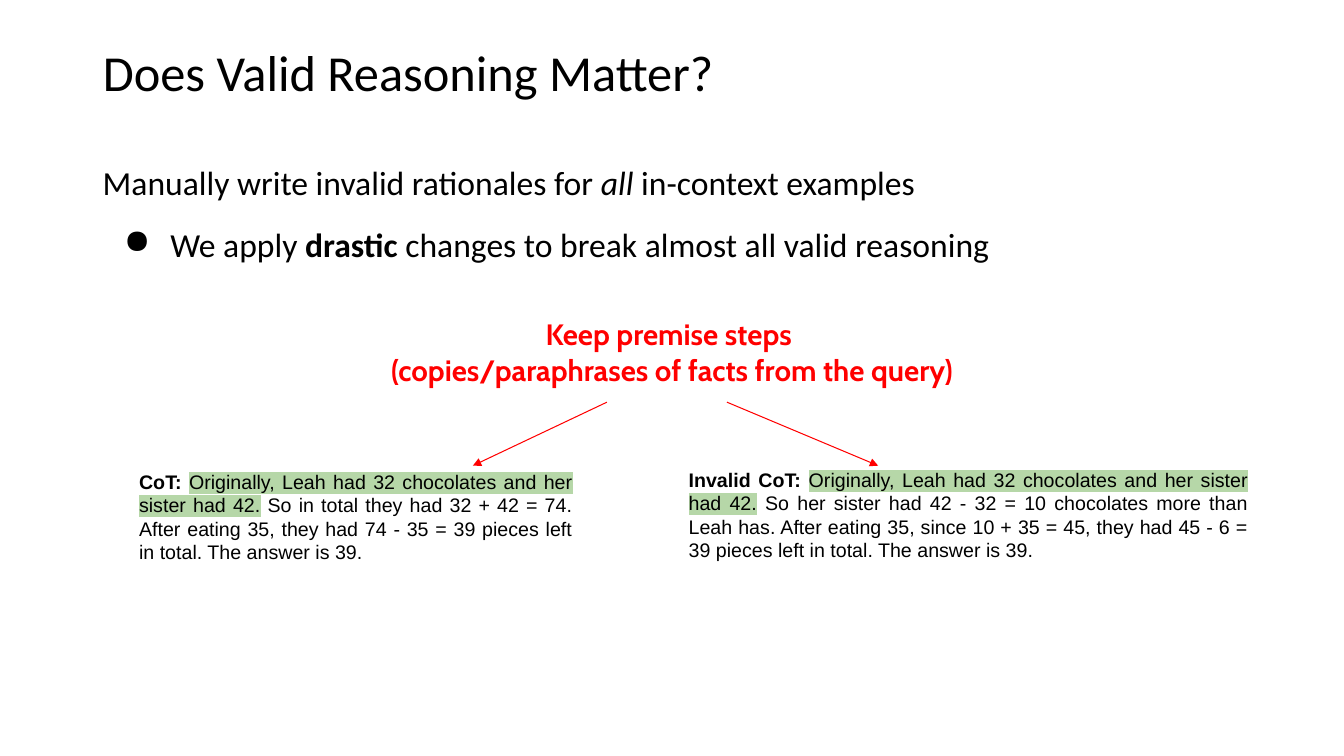
from dataclasses import dataclass

from lxml import etree
from pptx import Presentation
from pptx.dml.color import RGBColor
from pptx.enum.shapes import MSO_CONNECTOR
from pptx.enum.text import MSO_ANCHOR, MSO_AUTO_SIZE, PP_ALIGN
from pptx.oxml.ns import qn
from pptx.util import Pt

EMU_PER_PX = 9144  # 100 px to the inch
BLACK, RED, GREEN = "000000", "FF0000", "B6D7A8"
LEFT, CENTER, JUSTIFY = PP_ALIGN.LEFT, PP_ALIGN.CENTER, PP_ALIGN.JUSTIFY
TOP, MIDDLE = MSO_ANCHOR.TOP, MSO_ANCHOR.MIDDLE
NO_FIT, GROW = MSO_AUTO_SIZE.NONE, MSO_AUTO_SIZE.SHAPE_TO_FIT_TEXT
STRAIGHT = MSO_CONNECTOR.STRAIGHT
TITLE_ONLY = 5


@dataclass(frozen=True)
class Span:
    text: str
    bold: bool = False
    italic: bool = False
    highlight: str = ""


@dataclass(frozen=True)
class Line:
    spans: tuple[Span, ...]
    bullet: bool = False
    before: float = 0


@dataclass(frozen=True)
class Style:
    font: str
    size: int
    color: str = BLACK
    align: PP_ALIGN = LEFT
    spacing: float = 1.0
    inset: tuple[int, int] = (13, 13)
    anchor: MSO_ANCHOR = TOP
    fit: MSO_AUTO_SIZE = GROW


@dataclass(frozen=True)
class Block:
    box: tuple[int, int, int, int]
    style: Style
    lines: tuple[Line, ...]


@dataclass(frozen=True)
class Arrow:
    start: tuple[int, int]
    end: tuple[int, int]


def px(length: int) -> int:
    return length * EMU_PER_PX


def rgb(color: str) -> RGBColor:
    return RGBColor.from_string(color)


def add_bullet(paragraph) -> None:
    props = paragraph._p.get_or_add_pPr()
    props.set("marL", str(px(67)))
    props.set("indent", str(px(-46)))
    bullet_color = etree.SubElement(props, qn("a:buClr"))
    etree.SubElement(bullet_color, qn("a:srgbClr"), val=BLACK)
    etree.SubElement(props, qn("a:buChar"), char="●")


def add_span(paragraph, span: Span, style: Style) -> None:
    run = paragraph.add_run()
    run.text = span.text
    font = run.font
    font.name, font.size = style.font, Pt(style.size)
    font.bold, font.italic = span.bold, span.italic
    font.color.rgb = rgb(style.color)
    if span.highlight:
        marker = etree.Element(qn("a:highlight"))
        etree.SubElement(marker, qn("a:srgbClr"), val=span.highlight)
        run._r.rPr.find(qn("a:solidFill")).addnext(marker)


def write_block(shape, block: Block) -> None:
    style = block.style
    shape.left, shape.top, shape.width, shape.height = map(px, block.box)
    frame = shape.text_frame
    frame.word_wrap = True
    frame.auto_size = style.fit
    frame.vertical_anchor = style.anchor
    frame.margin_left = frame.margin_right = px(style.inset[0])
    frame.margin_top = frame.margin_bottom = px(style.inset[1])
    for index, line in enumerate(block.lines):
        paragraph = frame.add_paragraph() if index else frame.paragraphs[0]
        if line.bullet:
            add_bullet(paragraph)
        paragraph.alignment = style.align
        paragraph.line_spacing = style.spacing
        paragraph.space_before = Pt(line.before)
        for span in line.spans:
            add_span(paragraph, span, style)


def draw_arrow(slide, arrow: Arrow) -> None:
    connector = slide.shapes.add_connector(
        STRAIGHT, *map(px, arrow.start + arrow.end))
    connector.line.color.rgb = rgb(RED)
    connector.line.width = Pt(0.75)
    etree.SubElement(connector.line._get_or_add_ln(), qn("a:tailEnd"), type="triangle")
    etree.SubElement(connector._element.spPr, qn("a:effectLst"))


# Text styles
HEADING = Style("Calibri", 36, spacing=0.9, inset=(10, 5), anchor=MIDDLE, fit=NO_FIT)
BODY = Style("Calibri", 24, spacing=1.15, inset=(10, 5), fit=NO_FIT)
RATIONALE = Style("Arial", 14, align=JUSTIFY)
CALLOUT = Style("Cabin", 21, color=RED, align=CENTER)


def rationale(box: tuple[int, int, int, int], label: str, reasoning: str) -> Block:
    premise = "Originally, Leah had 32 chocolates and her sister had 42."
    return Block(box, RATIONALE, (Line((
        Span(label, bold=True), Span(premise, highlight=GREEN), Span(reasoning))),))


# Content
TITLE = Block((92, 2, 1150, 145), HEADING, (Line((Span("Does Valid Reasoning Matter?"),)),))
BLOCKS = (
    Block((92, 150, 1202, 476), BODY, (
        Line((Span("Manually write invalid rationales for "),
              Span("all ", italic=True), Span("in-context examples"))),
        Line((Span("We apply "), Span("drastic", bold=True),
              Span(" changes to break almost all valid reasoning")),
             bullet=True, before=10.7),
    )),
    rationale((125, 453, 456, 121), "CoT: ",
              " So in total they had 32 + 42 = 74. After eating 35, they had "
              "74 - 35 = 39 pieces left in total. The answer is 39."),
    rationale((670, 451, 581, 145), "Invalid CoT: ",
              " So her sister had 42 - 32 = 10 chocolates more than Leah has. "
              "After eating 35, since 10 + 35 = 45, they had 45 - 6 = 39 pieces "
              "left in total. The answer is 39."),
    Block((202, 301, 929, 99), CALLOUT, (
        Line((Span("Keep premise steps ", bold=True),)),
        Line((Span("(copies/paraphrases of facts from the query)", bold=True),)),
    )),
)
ARROWS = (Arrow((602, 399), (469, 462)), Arrow((721, 399), (871, 462)))


def main() -> None:
    deck = Presentation()
    deck.slide_width, deck.slide_height = px(1333), px(750)
    slide = deck.slides.add_slide(deck.slide_layouts[TITLE_ONLY])
    write_block(slide.shapes.title, TITLE)
    for block in BLOCKS:
        write_block(slide.shapes.add_textbox(*map(px, block.box)), block)
    for arrow in ARROWS:
        draw_arrow(slide, arrow)
    deck.save("out.pptx")


if __name__ == "__main__":
    main()
